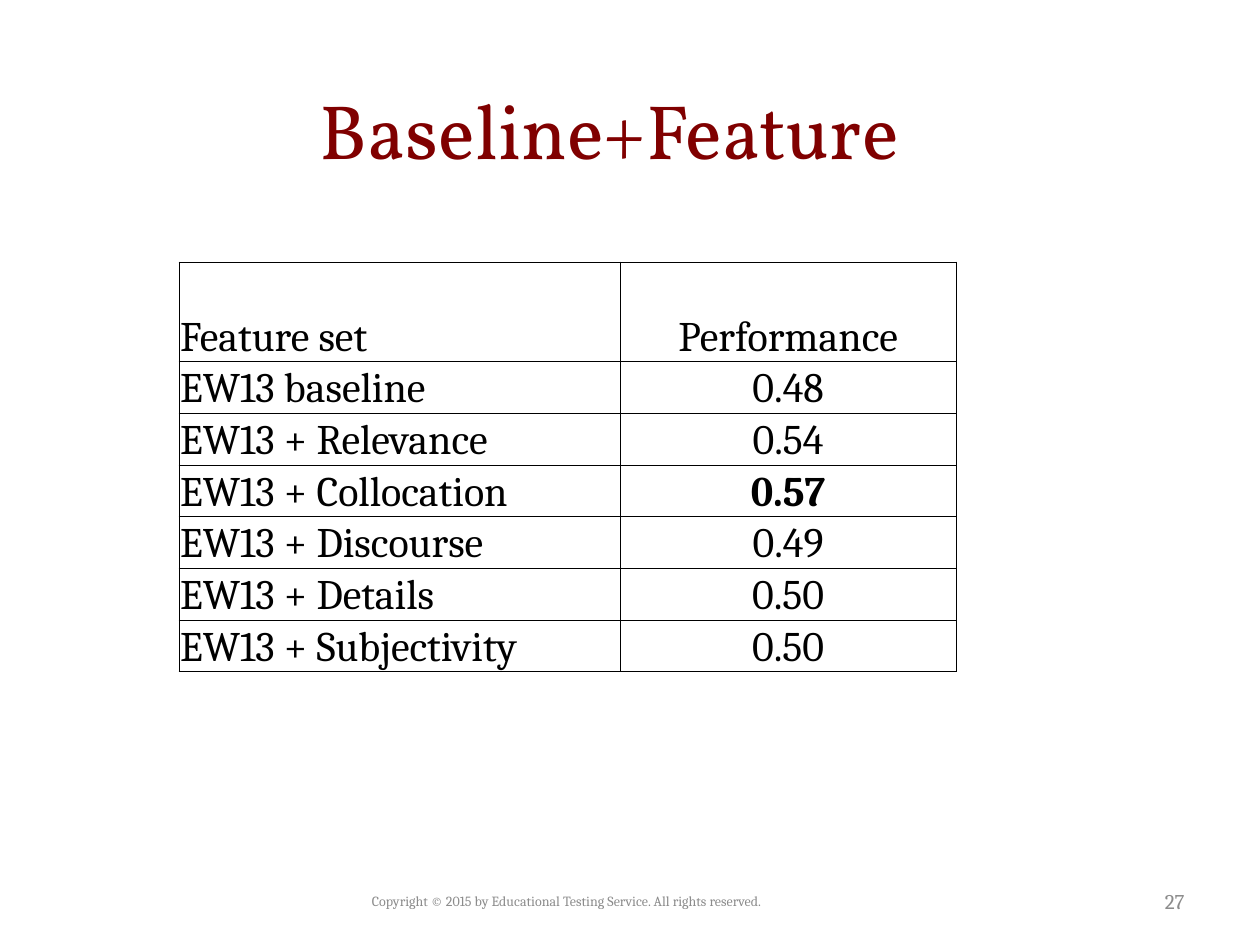
import pptx
import pptx.dml.color
import pptx.enum.text
import pptx.oxml
import pptx.oxml.ns
import pptx.util
from pptx.util import Inches

RGBColor = pptx.dml.color.RGBColor
ALIGN = pptx.enum.text.PP_ALIGN
ANCHOR = pptx.enum.text.MSO_ANCHOR

MAROON = RGBColor(0x80, 0x00, 0x00)
BLACK = RGBColor(0x00, 0x00, 0x00)
GRAY = RGBColor(0x8C, 0x8C, 0x8C)

RESULTS = [
    ("Feature set", "Performance"),
    ("EW13 baseline", "0.48"),
    ("EW13 + Relevance", "0.54"),
    ("EW13 + Collocation", "0.57"),
    ("EW13 + Discourse", "0.49"),
    ("EW13 + Details", "0.50"),
    ("EW13 + Subjectivity", "0.50"),
]
BEST_SCORE = "0.57"


class SlideBuilder:
    body_font = "Cambria"
    title_font = "Vollkorn"
    border_width = pptx.util.Pt(0.5)

    def __init__(self, slide):
        self.slide = slide

    def style(self, paragraph, size, color, align, font=body_font, bold=False):
        paragraph.alignment = align
        paragraph.font.name = font
        paragraph.font.size = pptx.util.Pt(size)
        paragraph.font.color.rgb = color
        paragraph.font.bold = bold

    def text(self, words, left, top, width, height, size, color, align, font=body_font):
        box = self.slide.shapes.add_textbox(
            Inches(left), Inches(top), Inches(width), Inches(height))
        frame = box.text_frame
        frame.word_wrap = True
        frame.vertical_anchor = ANCHOR.MIDDLE
        frame.text = words
        self.style(frame.paragraphs[0], size, color, align, font)

    def border(self, cell):
        """Draw a thin black line on all four sides of a cell."""
        properties = cell._tc.get_or_add_tcPr()
        for position, side in enumerate(("lnL", "lnR", "lnT", "lnB")):
            line = pptx.oxml.parse_xml(
                f'<a:{side} {pptx.oxml.ns.nsdecls("a")} w="{self.border_width}">'
                f'<a:solidFill><a:srgbClr val="{BLACK}"/></a:solidFill></a:{side}>')
            properties.insert(position, line)

    def table(self, rows, left, top, column_widths, header_height, row_height):
        heights = [header_height] + [row_height] * (len(rows) - 1)
        grid = self.slide.shapes.add_table(
            len(rows), len(column_widths), Inches(left), Inches(top),
            Inches(sum(column_widths)), Inches(sum(heights))).table
        grid.first_row = grid.horz_banding = False
        for column, width in zip(grid.columns, column_widths):
            column.width = Inches(width)
        for row, height, entries in zip(grid.rows, heights, rows):
            row.height = Inches(height)
            for cell, entry, align in zip(row.cells, entries, (ALIGN.LEFT, ALIGN.CENTER)):
                cell.text = entry
                cell.fill.background()
                cell.vertical_anchor = ANCHOR.BOTTOM
                cell.margin_left = cell.margin_right = cell.margin_top = Inches(0.01)
                cell.margin_bottom = 0
                self.style(cell.text_frame.paragraphs[0], 24, BLACK, align,
                           bold=entry == BEST_SCORE)
                self.border(cell)


def main():
    deck = pptx.Presentation()
    deck.slide_width, deck.slide_height = Inches(10), Inches(7.5)
    builder = SlideBuilder(deck.slides.add_slide(deck.slide_layouts[6]))

    builder.text("Baseline+Feature", 0.5, 0.5, 8.67, 1.05, 44, MAROON,
                 ALIGN.CENTER, builder.title_font)
    builder.text("Copyright © 2015 by Educational Testing Service. All rights reserved.",
                 2.25, 6.95, 4.5, 0.4, 8, GRAY, ALIGN.CENTER)
    builder.table(RESULTS, 1.42, 2.08, (3.5, 2.67), 0.79, 0.41)
    builder.text("27", 7.17, 6.95, 2.33, 0.4, 12, GRAY, ALIGN.RIGHT)

    deck.save("out.pptx")


if __name__ == "__main__":
    main()
